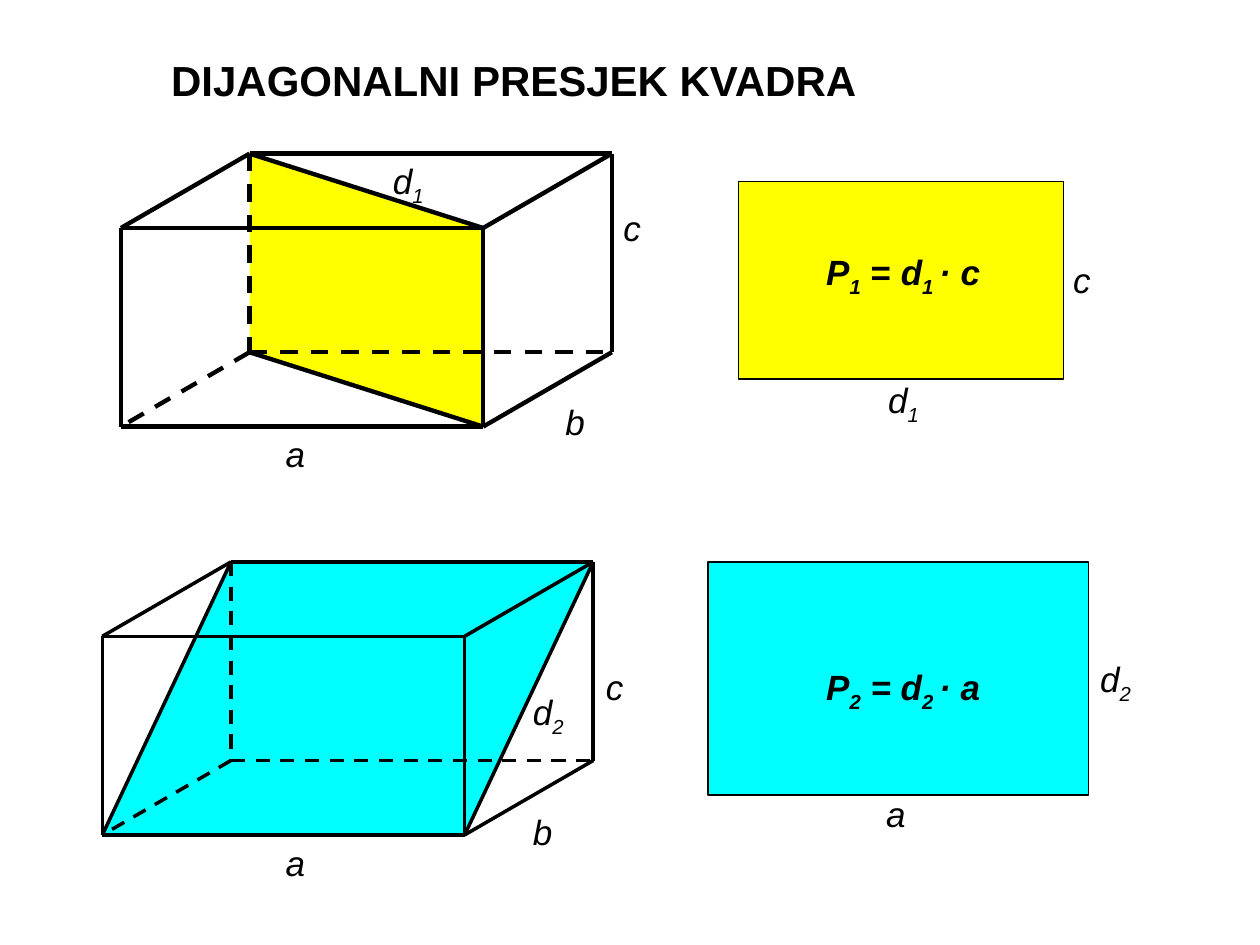
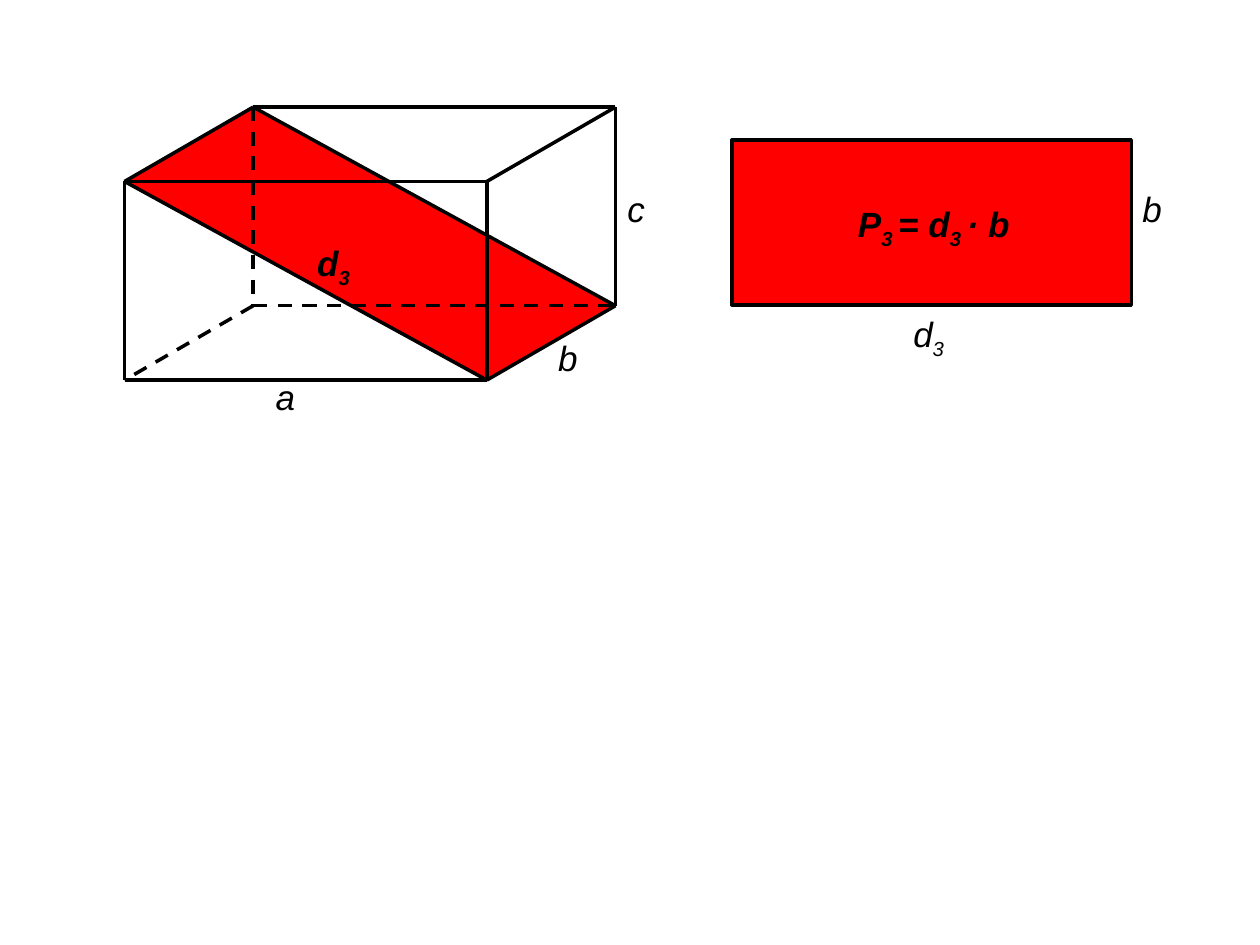
"""Draw the three diagonal sections of a cuboid and their areas on two slides."""
from dataclasses import dataclass
from itertools import combinations, product
from typing import NamedTuple

from lxml.etree import SubElement
from pptx import Presentation
from pptx.dml.color import RGBColor
from pptx.enum.dml import MSO_LINE
from pptx.enum.shapes import MSO_CONNECTOR, MSO_SHAPE
from pptx.enum.text import MSO_AUTO_SIZE, PP_ALIGN
from pptx.oxml.ns import qn
from pptx.slide import Slide
from pptx.util import Pt

COLORS = {"ink": "000000", "yellow": "FFFF00", "cyan": "00FFFF", "red": "FF0000"}
FONT = "Arial"
LABEL_HEIGHT = 31
EDGE_LENGTH, EDGE_HEIGHT = 207, 113.5
DEPTH_ACROSS, DEPTH_DOWN = 73.5, 42.5
HIDDEN_CORNER = (0, 1, 0)

Corner = tuple[int, int, int]


class Span(NamedTuple):
    text: str
    subscript: bool = False
    upright: bool = False


@dataclass(frozen=True)
class Label:
    spans: tuple[Span, ...]
    left: float
    top: float
    width: float
    bold: bool = False
    italic: bool = True
    centered: bool = False
    size: float = 20


class Rectangle(NamedTuple):
    left: float
    top: float
    width: float
    height: float
    line_width: float


@dataclass(frozen=True)
class Figure:
    left: float
    top: float
    line_width: float
    color: str
    section: tuple[Corner, Corner, Corner, Corner]
    rectangle: Rectangle
    labels: tuple[Label, ...]

    def point(self, corner: Corner) -> tuple[Pt, Pt]:
        """Place a corner given as (right, bottom, front) flags."""
        right, bottom, front = corner
        return (Pt(self.left + EDGE_LENGTH * right + DEPTH_ACROSS * (1 - front)),
                Pt(self.top + EDGE_HEIGHT * bottom + DEPTH_DOWN * front))


def plain(text: str) -> tuple[Span, ...]:
    """Make a single-span text."""
    return (Span(text),)


def indexed(letter: str, index: str) -> tuple[Span, ...]:
    """Make a letter with a subscript."""
    return Span(letter), Span(index, subscript=True)


TITLE = Label(plain("DIJAGONALNI PRESJEK KVADRA"), 90.7, 27.4, 410,
              bold=True, italic=False, size=24)

SECTION_D1 = Figure(
    69.1, 87.8, 2.5, "yellow", ((0, 0, 0), (1, 0, 1), (1, 1, 1), (0, 1, 0)),
    Rectangle(421.9, 103.7, 185.8, 113, 0.75),
    (Label(plain("a"), 156.2, 243.4, 61),
     Label(plain("b"), 316, 225.4, 34),
     Label(plain("c"), 349.2, 114.5, 42),
     Label(indexed("d", "1"), 217.4, 87.8, 58),
     Label(indexed("d", "1"), 500.4, 213, 63),
     Label(plain("c"), 606.2, 144, 31),
     Label((*indexed("P", "1"), Span(" = ", upright=True), *indexed("d", "1 "),
            Span("· c")), 465, 139.7, 125, bold=True)))

SECTION_D2 = Figure(
    58.5, 321.1, 2, "cyan", ((0, 0, 0), (1, 0, 0), (1, 1, 1), (0, 1, 1)),
    Rectangle(404.6, 321.1, 217.4, 133.2, 0.75),
    (Label(plain("a"), 156.2, 477.4, 61),
     Label(plain("b"), 297.4, 459.4, 52),
     Label(plain("c"), 339.1, 376.6, 36),
     Label(indexed("d", "2"), 297.4, 391, 42),
     Label(plain("a"), 465, 449.3, 94, centered=True),
     Label(indexed("d", "2"), 590.4, 372.2, 94, centered=True),
     Label((*indexed("P", "2"), *indexed(" = d", "2 "), Span("· a")),
           465, 376.6, 125, bold=True)))

SECTION_D3 = Figure(
    71.2, 61.2, 2, "red", ((1, 1, 1), (0, 0, 1), (0, 0, 0), (1, 1, 0)),
    Rectangle(418.3, 79.9, 228.2, 94.3, 2),
    (Label(plain("a"), 150.5, 211, 47),
     Label(plain("b"), 311.8, 188.6, 35),
     Label(plain("c"), 351.4, 103.7, 36),
     Label(indexed("d", "3"), 174.2, 134.6, 53, bold=True),
     Label(indexed("d", "3"), 514.8, 175, 47),
     Label(plain("b"), 645.8, 103.7, 39),
     Label((*indexed("P", "3 "), *indexed("= d", "3 "), Span("· b")),
           483.1, 112.3, 129, bold=True)))


def color(name: str) -> RGBColor:
    """Look up a palette colour."""
    return RGBColor.from_string(COLORS[name])


def add_label(page: Slide, label: Label) -> None:
    """Write a label in its own text box."""
    box = page.shapes.add_textbox(Pt(label.left), Pt(label.top),
                                  Pt(label.width), Pt(LABEL_HEIGHT))
    frame = box.text_frame
    frame.word_wrap = True
    frame.auto_size = MSO_AUTO_SIZE.SHAPE_TO_FIT_TEXT
    para = frame.paragraphs[0]
    para.alignment = PP_ALIGN.CENTER if label.centered else PP_ALIGN.LEFT
    para.font.name = FONT
    para.font.size = Pt(label.size)
    para.font.bold = label.bold
    para.font.italic = label.italic
    para.font.color.rgb = color("ink")
    for span in label.spans:
        run = para.add_run()
        run.text = span.text
        if span.upright:
            run.font.italic = False
        if span.subscript:
            run.font._element.set("baseline", "-25000")


def add_edge(page: Slide, figure: Figure, start: Corner, end: Corner) -> None:
    """Draw a line between two corners, dashed at the hidden corner."""
    edge = page.shapes.add_connector(MSO_CONNECTOR.STRAIGHT,
                                     *figure.point(start), *figure.point(end))
    edge.line.color.rgb = color("ink")
    edge.line.width = Pt(figure.line_width)
    if HIDDEN_CORNER in (start, end) and differences(start, end) == 1:
        edge.line.dash_style = MSO_LINE.DASH
    SubElement(edge._element.spPr, qn("a:effectLst"))


def differences(start: Corner, end: Corner) -> int:
    """Count the directions in which two corners differ."""
    return sum(first != second for first, second in zip(start, end))


def add_section(page: Slide, figure: Figure) -> None:
    """Fill the diagonal section of the cuboid."""
    first, *others = map(figure.point, figure.section)
    builder = page.shapes.build_freeform(*first, scale=1.0)
    builder.add_line_segments(others, close=True)
    section = builder.convert_to_shape()
    section.shadow.inherit = False
    section.fill.solid()
    section.fill.fore_color.rgb = color(figure.color)
    section.line.fill.background()


def add_rectangle(page: Slide, figure: Figure) -> None:
    """Draw the section in its true shape."""
    *bounds, line_width = figure.rectangle
    rectangle = page.shapes.add_shape(MSO_SHAPE.RECTANGLE, *map(Pt, bounds))
    rectangle.shadow.inherit = False
    rectangle.fill.solid()
    rectangle.fill.fore_color.rgb = color(figure.color)
    rectangle.line.color.rgb = color("ink")
    rectangle.line.width = Pt(line_width)


def add_figure(page: Slide, figure: Figure) -> None:
    """Draw a cuboid with its section, true shape and labels."""
    add_section(page, figure)
    for start, end in combinations(product((0, 1), repeat=3), 2):
        if differences(start, end) == 1:
            add_edge(page, figure, start, end)
    sides = zip(figure.section, figure.section[1:] + figure.section[:1])
    for start, end in sides:
        if differences(start, end) == 2:
            add_edge(page, figure, start, end)
    add_rectangle(page, figure)
    for label in figure.labels:
        add_label(page, label)


def main() -> None:
    """Build and save the deck."""
    deck = Presentation()
    deck.slide_width, deck.slide_height = Pt(720), Pt(540)
    blank = deck.slide_layouts[6]
    for titles, figures in (((TITLE,), (SECTION_D1, SECTION_D2)), ((), (SECTION_D3,))):
        page = deck.slides.add_slide(blank)
        for title in titles:
            add_label(page, title)
        for figure in figures:
            add_figure(page, figure)
    deck.save("out.pptx")


if __name__ == "__main__":
    main()
